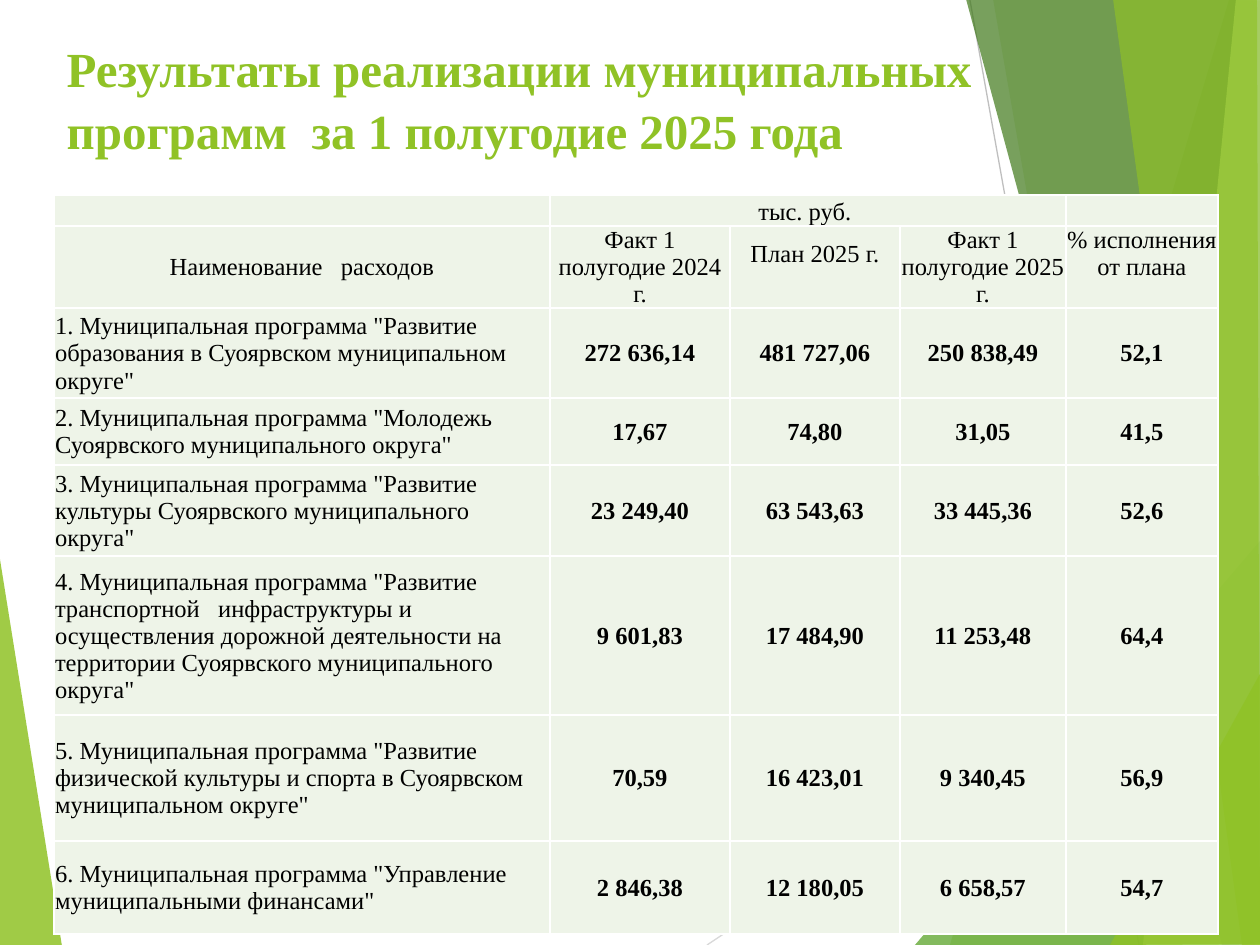
from lxml.etree import SubElement as Sub
from pptx import Presentation
from pptx.dml.color import RGBColor as Rgb
from pptx.enum.shapes import MSO_CONNECTOR as Conn
from pptx.enum.text import MSO_ANCHOR as Anchor, MSO_AUTO_SIZE as Fit, PP_ALIGN as Align
from pptx.oxml.ns import qn
from pptx.util import Emu, Pt

SCALE = 914400 / 126
LIME = "90C226"
FONT = "Times New Roman"

HEAD = [
    ["", "тыс. руб. ", "", "", ""],
    ["Наименование   расходов", "Факт 1 полугодие 2024 г.", "План 2025 г.",
     "Факт 1 полугодие 2025 г.", "% исполнения от плана"],
]
PLANS = [
    ("Развитие образования в Суоярвском муниципальном округе",
     "272 636,14", "481 727,06", "250 838,49", "52,1"),
    ("Молодежь Суоярвского муниципального округа",
     "17,67", "74,80", "31,05", "41,5"),
    ("Развитие культуры Суоярвского муниципального округа",
     "23 249,40", "63 543,63", "33 445,36", "52,6"),
    ("Развитие транспортной   инфраструктуры и осуществления дорожной "
     "деятельности на территории Суоярвского муниципального округа",
     "9 601,83", "17 484,90", "11 253,48", "64,4"),
    ("Развитие физической культуры и спорта в Суоярвском муниципальном округе",
     "70,59", "16 423,01", "9 340,45", "56,9"),
    ("Управление муниципальными финансами",
     "2 846,38", "12 180,05", "6 658,57", "54,7"),
]
COLS = [496, 180, 170, 166, 152]
ROWS = [27, 82, 90, 67, 91, 159, 126, 93]

LEFT = (LIME, 85, [(-1, 553), (62, 946), (-1, 945)])
RAYS = [("D9D9D9", (707, 945), (1261, 576)), ("BFBFBF", (970, 0), (1139, 945))]
FACETS = [
    (LIME, 30, [(1229, 0), (950, 945), (1263, 946), (1261, 1)]),
    (LIME, 20, [(993, -1), (1158, 945), (1261, 945), (1261, -1)]),
    ("54A021", 72, [(915, 945), (1260, 541), (1261, 945)]),
    ("3F7819", 70, [(966, -1), (1222, 945), (1261, 944), (1261, -1)]),
    ("C0E474", 70, [(1236, -1), (1143, 945), (1261, 945), (1260, -1)]),
    (LIME, 65, [(1113, -1), (1242, 945), (1260, 945), (1257, -1)]),
    (LIME, 80, [(1110, 945), (1260, 674), (1261, 944)]),
]


def px(num):
    return Emu(round(num * SCALE))


def rgb(code):
    return Rgb.from_string(code)


def put(obj, **vals):
    """Set each named value as an attribute of obj."""
    for name, val in vals.items():
        setattr(obj, name, val)


class Deck:
    """Holds the current slide and the text style."""

    def __init__(self, slide, font):
        self.slide, self.font = slide, font
        self.shapes = slide.shapes

    def style(self, run, size, color, bold=False):
        put(run.font, name=self.font, size=Pt(size), bold=bold)
        run.font.color.rgb = rgb(color)

    def facet(self, color, alpha, pts):
        """Draw a filled polygon with an opacity in percent."""
        pen = self.shapes.build_freeform(*pts[0], scale=SCALE)
        pen.add_line_segments(pts[1:], close=True)
        form = pen.convert_to_shape()
        form.shadow.inherit = False
        form.line.fill.background()
        form.fill.solid()
        form.fill.fore_color.rgb = rgb(color)
        tone = form.fill._xPr.find(f".//{qn('a:srgbClr')}")
        Sub(tone, qn("a:alpha"), val=str(alpha * 1000))

    def ray(self, color, start, end):
        ends = map(px, (*start, *end))
        line = self.shapes.add_connector(Conn.STRAIGHT, *ends)
        line.line.color.rgb = rgb(color)
        line.line.width = Pt(0.75)
        Sub(line._element.spPr, qn("a:effectLst"))

    def title(self, text, left, top, width, height):
        box = self.shapes.title
        put(box, left=px(left), top=px(top), width=px(width), height=px(height))
        frame = box.text_frame
        put(frame, text=text, word_wrap=True, auto_size=Fit.NONE,
            vertical_anchor=Anchor.TOP)
        para = frame.paragraphs[0]
        put(para, alignment=Align.LEFT, line_spacing=1.05)
        for run in para.runs:
            self.style(run, 28, LIME, True)
        self.shapes._spTree.append(box._element)

    def border(self, cell, color):
        props = cell._tc.get_or_add_tcPr()
        for side in "LRTB":
            edge = Sub(props, qn(f"a:ln{side}"), w=str(Pt(1)))
            fill = Sub(edge, qn("a:solidFill"))
            Sub(fill, qn("a:srgbClr"), val=color)

    def cell(self, cell, text, align, anchor, bold):
        self.border(cell, "FFFFFF")
        cell.fill.solid()
        cell.fill.fore_color.rgb = rgb("EEF4E8")
        put(cell, margin_left=px(1), margin_right=px(1), margin_top=px(1),
            margin_bottom=0, vertical_anchor=anchor)
        para = cell.text_frame.paragraphs[0]
        para.alignment = align
        if text:
            run = para.add_run()
            run.text = text
            self.style(run, 14, "000000", bold)
        else:
            Sub(para._p, qn("a:endParaRPr"), sz="1400")

    def table(self, data, left, top):
        size = map(px, (left, top, sum(COLS), sum(ROWS)))
        grid = self.shapes.add_table(len(ROWS), len(COLS), *size).table
        put(grid, first_row=False, horz_banding=False)
        for col, width in zip(grid.columns, COLS):
            col.width = px(width)
        for row, height in zip(grid.rows, ROWS):
            row.height = px(height)
        for i, line in enumerate(data):
            for j, text in enumerate(line):
                body = i >= len(HEAD)
                align = Align.LEFT if body and j == 0 else Align.CENTER
                anchor = Anchor.MIDDLE
                if i == 0:
                    anchor = Anchor.BOTTOM
                elif i == 1 and j in (1, 3, 4):
                    anchor = Anchor.TOP
                self.cell(grid.cell(i, j), text, align, anchor, body and j > 0)
        grid.cell(0, 1).merge(grid.cell(0, 3))
        grid.cell(1, 2).margin_bottom = px(27)


def main():
    prs = Presentation()
    put(prs, slide_width=px(1260), slide_height=px(945))
    deck = Deck(prs.slides.add_slide(prs.slide_layouts[5]), FONT)
    deck.facet(*LEFT)
    for ray in RAYS:
        deck.ray(*ray)
    for facet in FACETS:
        deck.facet(*facet)
    deck.title("Результаты реализации муниципальных \v"
               "программ  за 1 полугодие 2025 года", 54, 29, 1101, 181)
    body = [[f'{n}. Муниципальная программа "{name}"', *nums]
            for n, (name, *nums) in enumerate(PLANS, 1)]
    deck.table(HEAD + body, 54, 195)
    prs.save("out.pptx")


if __name__ == "__main__":
    main()
